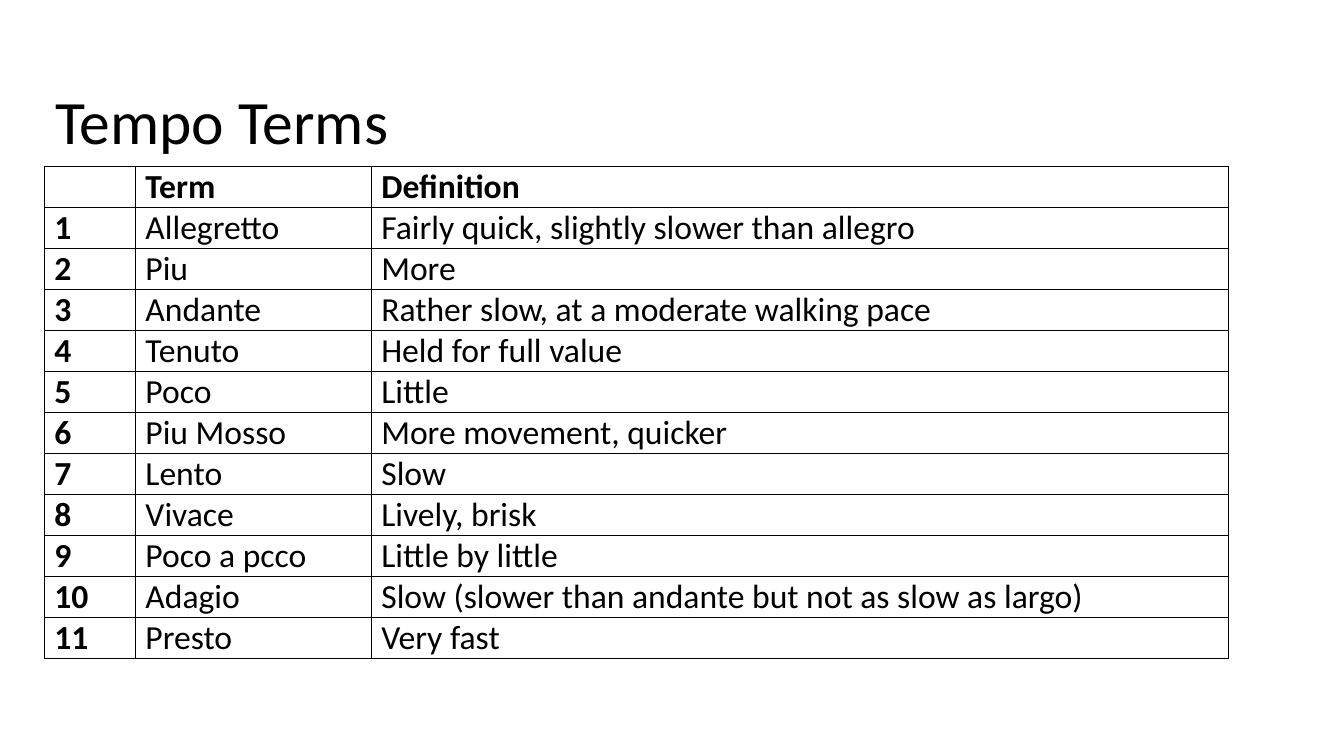
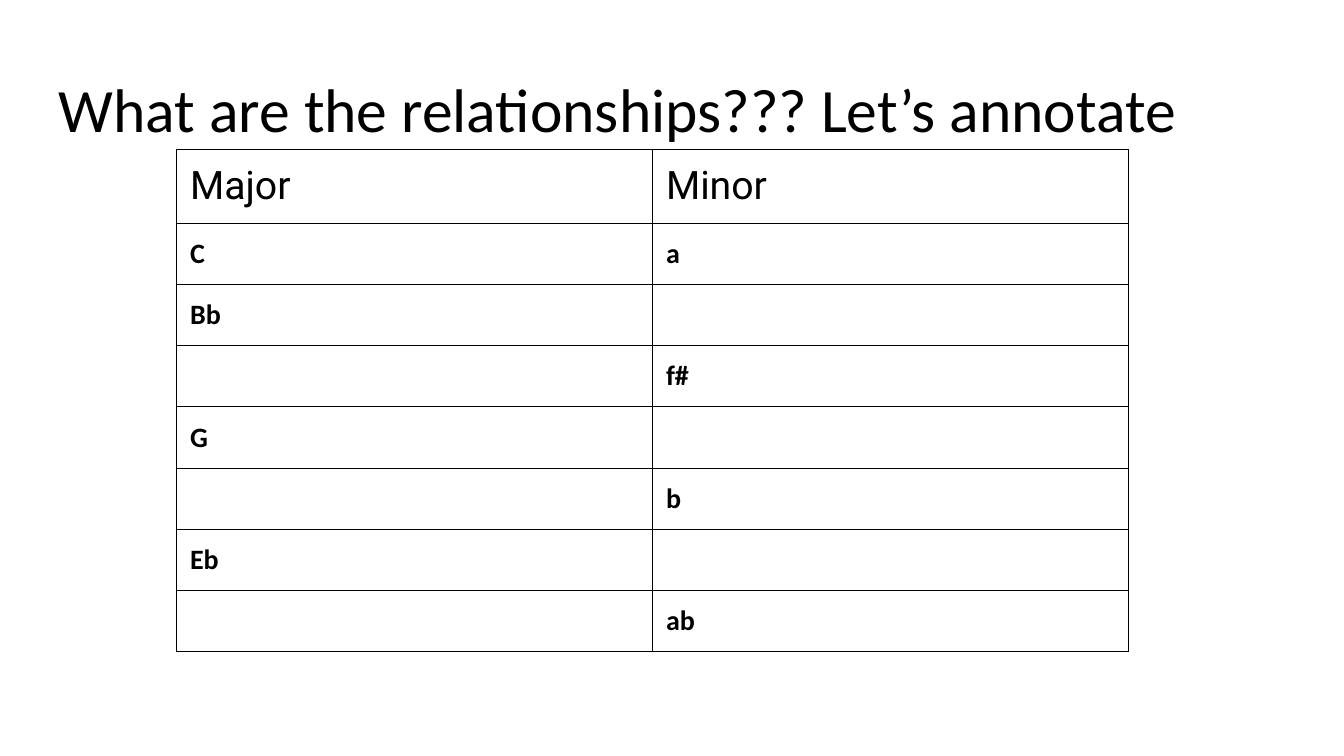
from lxml.etree import SubElement
from pptx import Presentation
from pptx.dml.color import RGBColor
from pptx.enum.text import MSO_ANCHOR
from pptx.oxml.ns import qn
from pptx.util import Pt

HUES = {"ink": "000000", "paper": "FFFFFF"}


class Deck:
    """Holds the shared style and the current slide."""
    font = "Calibri"
    head = 44
    line = 0.75

    def __init__(self):
        self.prs = Presentation()
        self.prs.slide_width, self.prs.slide_height = Pt(960), Pt(540)
        self.slide = None

    def page(self):
        self.slide = self.prs.slides.add_slide(self.prs.slide_layouts[6])
        fill = self.slide.background.fill
        fill.solid()
        fill.fore_color.rgb = RGBColor.from_string(HUES["paper"])

    def run(self, para, text, size, bold=False, font=None):
        run = para.add_run()
        run.text = text
        run.font.size = Pt(size)
        run.font.bold = bold
        run.font.name = font or self.font
        run.font.color.rgb = RGBColor.from_string(HUES["ink"])

    def pad(self, box, side, top):
        box.margin_left = box.margin_right = Pt(side)
        box.margin_top = box.margin_bottom = Pt(top)

    def title(self, text, top, inset):
        box = self.slide.shapes.add_textbox(Pt(32.4), Pt(top), Pt(894.4), Pt(60.2))
        frame = box.text_frame
        frame.word_wrap = True
        frame.vertical_anchor = MSO_ANCHOR.TOP
        self.pad(frame, inset, inset)
        para = frame.paragraphs[0]
        para.line_spacing = 0.9
        self.run(para, text, self.head)

    def edge(self, cell):
        props = cell._tc.get_or_add_tcPr()
        for at, tag in enumerate(("a:lnL", "a:lnR", "a:lnT", "a:lnB")):
            line = props.makeelement(qn(tag), {"w": str(Pt(self.line))})
            fill = SubElement(line, qn("a:solidFill"))
            SubElement(fill, qn("a:srgbClr"), val=HUES["ink"])
            props.insert(at, line)

    def table(self, left, top, cols, highs, rows, pads, style):
        """style(row, col) gives size, bold and font of a cell."""
        grid = self.slide.shapes.add_table(
            len(rows), len(cols), Pt(left), Pt(top), Pt(sum(cols)), Pt(sum(highs))).table
        grid.first_row = grid.horz_banding = False
        for col, wide in zip(grid.columns, cols):
            col.width = Pt(wide)
        for r, (row, high) in enumerate(zip(rows, highs)):
            grid.rows[r].height = Pt(high)
            for c, text in enumerate(row):
                cell = grid.cell(r, c)
                self.pad(cell, *pads)
                cell.fill.solid()
                cell.fill.fore_color.rgb = RGBColor.from_string(HUES["paper"])
                self.edge(cell)
                if text:
                    self.run(cell.text_frame.paragraphs[0], text, *style(r, c))


TERMS = [
    ("Allegretto", "Fairly quick, slightly slower than allegro"),
    ("Piu", "More"),
    ("Andante", "Rather slow, at a moderate walking pace"),
    ("Tenuto", "Held for full value"),
    ("Poco", "Little"),
    ("Piu Mosso", "More movement, quicker"),
    ("Lento", "Slow"),
    ("Vivace", "Lively, brisk"),
    ("Poco a pcco", "Little by little"),
    ("Adagio", "Slow (slower than andante but not as slow as largo)"),
    ("Presto", "Very fast"),
]
KEYS = [("Major", "Minor"), ("C", "a"), ("Bb", ""), ("", "f#"),
        ("G", ""), ("", "b"), ("Eb", ""), ("", "ab")]


def main():
    deck = Deck()

    # Tempo terms, numbered
    deck.page()
    rows = [("", "Term", "Definition")]
    rows += [(str(n), *term) for n, term in enumerate(TERMS, 1)]
    deck.table(31.7, 118.8, [65, 168.5, 612.5], [29.3] * len(rows), rows, (7.2, 0),
               lambda r, c: (24, r == 0 or c == 0))
    deck.title("Tempo Terms", 58.3, 7.2)

    # Major and minor keys, with gaps to fill in
    deck.page()
    deck.title("What are the relationships??? Let’s annotate", 46.8, 9.6)
    deck.table(126.2, 106.8, [340, 340], [52] + [43.7] * (len(KEYS) - 1), KEYS, (9.6, 9.6),
               lambda r, c: (20, True) if r else (28, False, "Roboto"))

    deck.prs.save("out.pptx")


if __name__ == "__main__":
    main()
